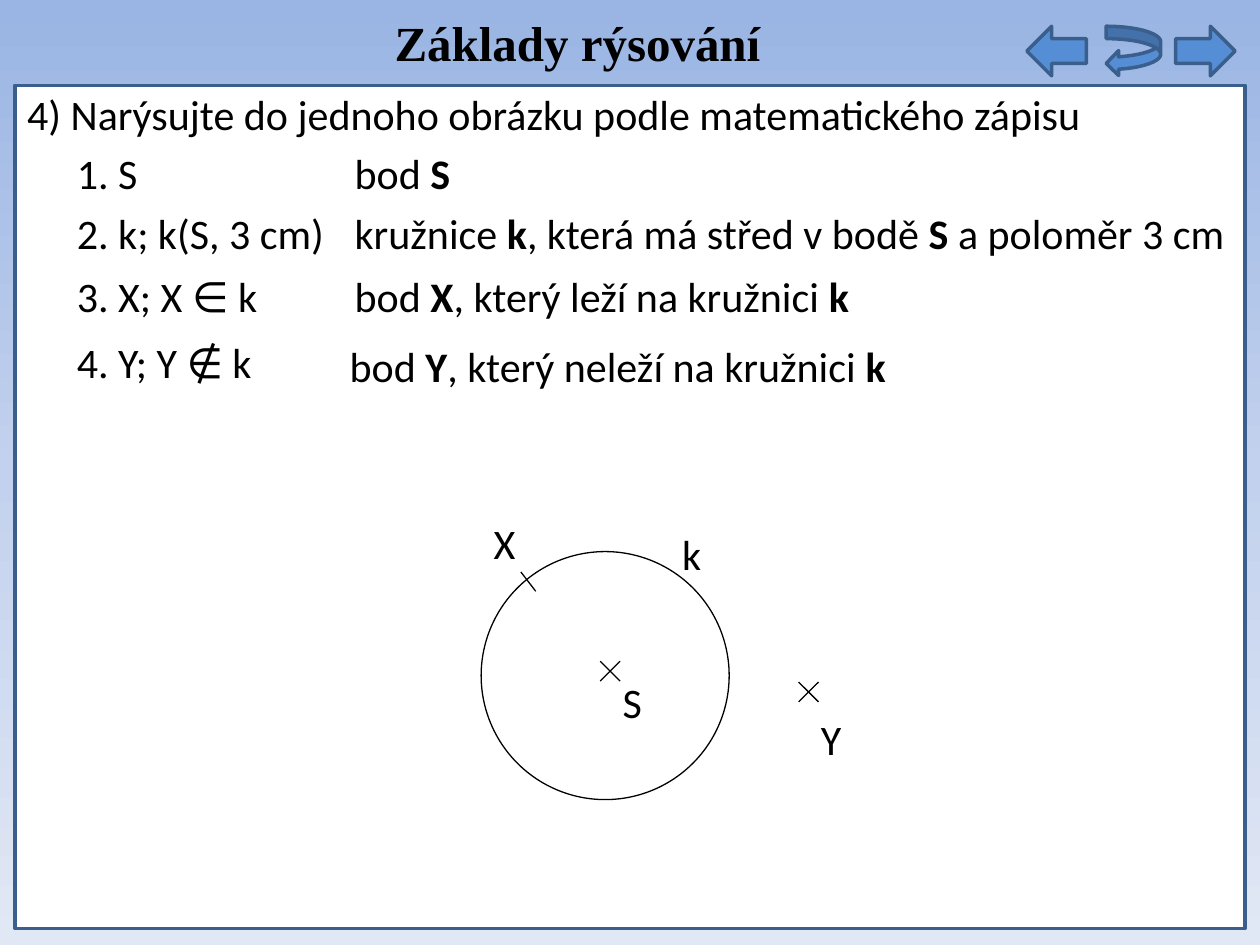
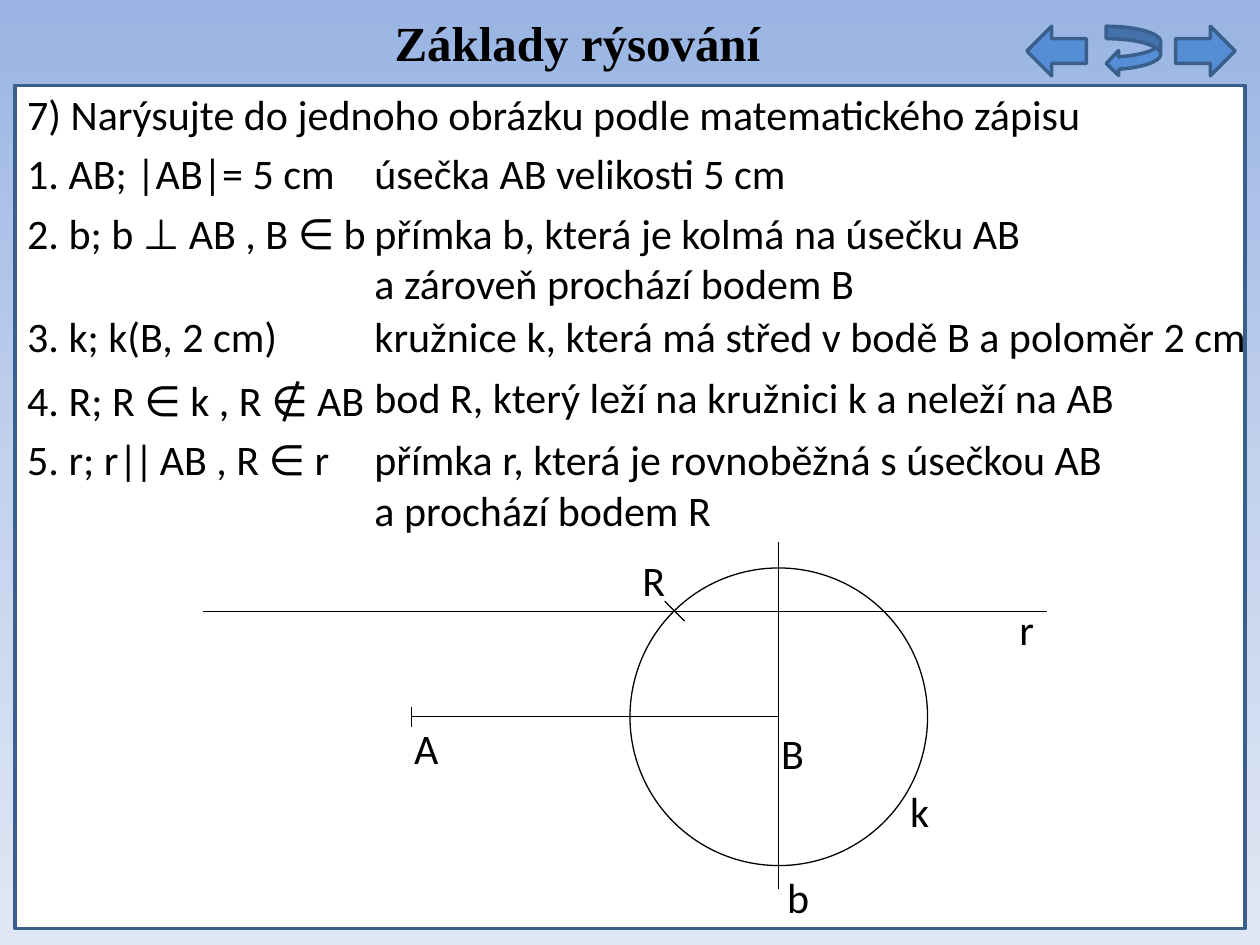
from copy import deepcopy

from lxml.etree import SubElement
from pptx import Presentation
from pptx.dml.color import RGBColor
from pptx.enum.shapes import MSO_CONNECTOR as Connector, MSO_SHAPE as Shape
from pptx.enum.text import MSO_ANCHOR as Anchor, MSO_AUTO_SIZE as AutoSize, PP_ALIGN as Align
from pptx.oxml.ns import qn
from pptx.util import Cm, Pt

COLORS = {
    "ink": "000000",
    "panel": "FFFFFF",
    "border": "3A5F8C",
    "arrow": "558ED5",
    "sky_top": "9AB5E4",
    "sky_middle": "C2D1ED",
    "sky_bottom": "E1E8F5",
}
BODY_FONT, TITLE_FONT = "Calibri", "Times New Roman"
TITLE = "Základy rýsování"
TITLE_ONLY = 5
MARGIN = 0.3
LINE_HEIGHT = 1.27
MARK_ARM = 0.2


def color(name):
    return RGBColor.from_string(COLORS[name])


def paint_background(master):
    fill = master.background.fill
    fill.gradient()
    fill.gradient_angle = 270
    stops = master.element.find(".//" + qn("a:gsLst"))
    stops.insert(1, deepcopy(stops[0]))
    names = ("sky_top", "sky_middle", "sky_bottom")
    for stop, name, position in zip(fill.gradient_stops, names, (0, 0.5, 1)):
        stop.color.rgb = color(name)
        stop.position = position


def add_span(para, text, font=BODY_FONT, size=24, bold=False):
    span = para.add_run()
    span.text = text
    span.font.name = font
    span.font.size = Pt(size)
    span.font.bold = bold
    span.font.color.rgb = color("ink")
    return span


def embolden(span):
    span.font.bold = True


def tighten(span):
    span.font._element.set("spc", "-200")


def add_text(page, left, top, width, text, accent=embolden):
    """Add a text box; every second part between asterisks gets the accent."""
    box = page.shapes.add_textbox(Cm(left), Cm(top), Cm(width), Cm(LINE_HEIGHT))
    frame = box.text_frame
    frame.word_wrap = True
    frame.auto_size = AutoSize.SHAPE_TO_FIT_TEXT
    for index, part in enumerate(text.split("*")):
        if part:
            span = add_span(frame.paragraphs[0], part)
            if index % 2:
                accent(span)


def add_preset(page, kind, left, top, width, height, fill=None, line="border", weight=2):
    shape = page.shapes.add_shape(kind, Cm(left), Cm(top), Cm(width), Cm(height))
    shape.shadow.inherit = False
    if fill:
        shape.fill.solid()
        shape.fill.fore_color.rgb = color(fill)
    else:
        shape.fill.background()
    shape.line.color.rgb = color(line)
    shape.line.width = Pt(weight)


def add_line(page, x1, y1, x2, y2):
    line = page.shapes.add_connector(Connector.STRAIGHT, Cm(x1), Cm(y1), Cm(x2), Cm(y2))
    line.line.color.rgb = color("ink")
    line.line.width = Pt(0.75)
    SubElement(line._element.spPr, qn("a:effectLst"))


def add_circle(page, x, y, radius):
    add_preset(page, Shape.OVAL, x - radius, y - radius, 2 * radius, 2 * radius,
               line="ink", weight=0.75)


def add_cross(page, x, y):
    for rise in (MARK_ARM, -MARK_ARM):
        add_line(page, x - MARK_ARM, y - rise, x + MARK_ARM, y + rise)


def add_end_mark(page, x, y):
    add_line(page, x, y - MARK_ARM, x, y + MARK_ARM)


def add_labels(page, width, labels):
    for text, left, top in labels:
        add_text(page, left, top, width, text)


def add_title(page):
    title = page.shapes.title
    title.left, title.top, title.width, title.height = Cm(7.7), Cm(0.13), Cm(7.98), Cm(1.45)
    frame = title.text_frame
    frame.word_wrap = False
    frame.auto_size = AutoSize.SHAPE_TO_FIT_TEXT
    frame.vertical_anchor = Anchor.TOP
    para = frame.paragraphs[0]
    para.alignment = Align.LEFT
    add_span(para, TITLE, TITLE_FONT, 28, True)


def add_navigation(page):
    for kind, left, width in ((Shape.LEFT_ARROW, 20.7, 1.2),
                              (Shape.CURVED_LEFT_ARROW, 22.3, 1.1),
                              (Shape.RIGHT_ARROW, 23.7, 1.2)):
        add_preset(page, kind, left, 0.53, width, 1, fill="arrow")


def add_task_page(deck, task):
    page = deck.slides.add_slide(deck.slide_layouts[TITLE_ONLY])
    add_title(page)
    add_preset(page, Shape.RECTANGLE, MARGIN, 1.72, 24.8, 17, fill="panel")
    add_navigation(page)
    add_text(page, MARGIN, 1.65, 24.6, task)
    return page


def add_steps(page, left, width, steps):
    """Add the numbered notations, all at one indent."""
    for top, notation in steps:
        add_text(page, left, top, width, notation, accent=tighten)


def add_circle_task(deck):
    page = add_task_page(deck, "4) Narýsujte do jednoho obrázku podle matematického zápisu")
    add_steps(page, 1.3, 6.6, (
        (2.85, "1. S"),
        (4.05, "2. k; k(S, 3 cm)"),
        (5.33, "3. X; X ∈ k"),
        (6.65, "4. Y; Y ∉ k"),
    ))
    for left, top, meaning in (
        (6.9, 2.85, "bod *S*"),
        (6.9, 4.05, "kružnice *k*, která má střed v bodě *S* a poloměr 3 cm"),
        (6.9, 5.33, "bod *X*, který leží na kružnici *k*"),
        (6.8, 6.73, "bod *Y*, který neleží na kružnici *k*"),
    ):
        add_text(page, left, top, 18.3, meaning)

    add_circle(page, 12.2, 13.62, 2.5)
    add_cross(page, 12.3, 13.53)
    add_cross(page, 16.3, 13.95)
    add_line(page, 10.5, 11.53, 10.8, 11.92)
    add_labels(page, 1.2, (("S", 12.3, 13.52), ("k", 13.5, 10.52),
                           ("X", 9.7, 10.3), ("Y", 16.3, 14.25)))


def add_parallel_task(deck):
    page = add_task_page(deck, "7) Narýsujte do jednoho obrázku podle matematického zápisu")
    add_steps(page, MARGIN, 8.2, (
        (2.85, "1. AB; |AB|= 5 cm"),
        (4.05, "2. b; b ⊥ AB , B ∈ b"),
        (6.13, "3. k; k(B, 2 cm)"),
        (7.42, "4. R; R ∈ k , R ∉ AB"),
        (8.62, "5. r; r*|| *AB , R ∈ r"),
    ))
    for top, width, meaning in (
        (2.85, 16.2, "úsečka AB velikosti 5 cm"),
        (4.05, 13.8, "přímka b, která je kolmá na úsečku AB a zároveň prochází bodem B"),
        (6.13, 18.3, "kružnice k, která má střed v bodě B a poloměr 2 cm"),
        (7.37, 16.2, "bod R, který leží na kružnici k a neleží na AB"),
        (8.62, 15.7, "přímka r, která je rovnoběžná s úsečkou AB a prochází bodem R"),
    ):
        add_text(page, 7.3, top, width, meaning)

    a_x, b_x, base_y = 8.3, 15.7, 14.45
    add_line(page, a_x, base_y, b_x, base_y)
    add_end_mark(page, a_x, base_y)
    add_end_mark(page, b_x, base_y)
    add_line(page, b_x, 10.92, b_x, 17.93)
    add_circle(page, b_x, base_y, 3)
    add_line(page, 4.1, 12.32, 21.1, 12.32)
    add_line(page, 13.4, 12.12, 13.8, 12.52)
    add_labels(page, 1.6, (("A", 8.1, 14.45), ("B", 15.5, 14.55), ("b", 15.62, 17.45),
                           ("k", 18.1, 15.72), ("R", 12.7, 11.05), ("r", 20.3, 12.04)))


def main():
    deck = Presentation()
    deck.slide_width, deck.slide_height = Cm(25.4), Cm(19.05)
    paint_background(deck.slide_master)
    add_circle_task(deck)
    add_parallel_task(deck)
    deck.save("out.pptx")


if __name__ == "__main__":
    main()
